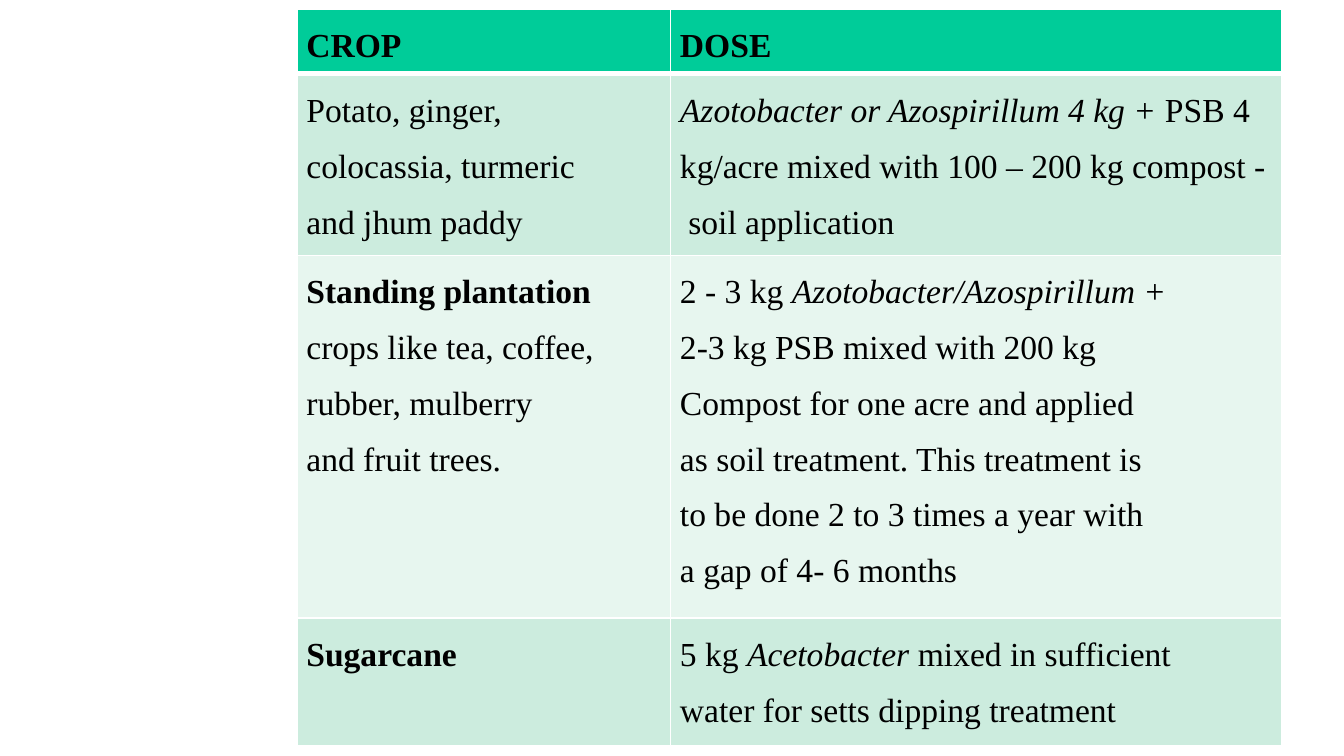
from lxml import etree
from pptx import Presentation
from pptx.dml.color import RGBColor
from pptx.oxml.ns import qn
from pptx.util import Inches, Pt

FONT = "Times New Roman"
COLORS = {"head": "00CC99", "dark": "CCECDE", "light": "E7F6EF",
          "text": "000000", "edge": "FFFFFF"}
EDGES = {"a:lnL": 1, "a:lnR": 1, "a:lnT": 1, "a:lnB": 3}
COLS = [2.78, 4.55]
ROWS = [
    (0.48, "head", [[[("CROP", "b")]], [[("DOSE", "b")]]]),
    (1.35, "dark", [
        [[("Potato, ginger,", "")],
         [("colocassia, turmeric", "")],
         [("and jhum paddy", "")]],
        [[("Azotobacter or Azospirillum 4 kg + ", "i"),
          ("PSB 4 kg/acre mixed with 100 – 200 kg compost -  soil application", "")]],
    ]),
    (2.7, "light", [
        [[("Standing plantation", "b")],
         [("crops like tea, coffee,", "")],
         [("rubber, mulberry", "")],
         [("and fruit trees.", "")]],
        [[("2 - 3 kg ", ""), ("Azotobacter/Azospirillum +", "i")],
         [("2-3 kg PSB mixed with 200 kg", "")],
         [("Compost for one acre and applied", "")],
         [("as soil treatment. This treatment is", "")],
         [("to be done 2 to 3 times a year with", "")],
         [("a gap of 4- 6 months", "")]],
    ]),
    (0.95, "dark", [
        [[("Sugarcane", "b")]],
        [[("5 kg ", ""), ("Acetobacter ", "i"), ("mixed in sufficient", "")],
         [("water for setts dipping treatment", "")]],
    ]),
]

deck = Presentation()
deck.slide_width = Inches(10)
deck.slide_height = Inches(10 * 9 / 16)
slide = deck.slides.add_slide(deck.slide_layouts[6])

high = sum(row[0] for row in ROWS)
frame = slide.shapes.add_table(len(ROWS), len(COLS), Inches(2.21), Inches(0.07),
                               Inches(sum(COLS)), Inches(high))
table = frame.table
for col, width in zip(table.columns, COLS):
    col.width = Inches(width)

for row, (height, fill, texts) in zip(table.rows, ROWS):
    row.height = Inches(height)
    for cell, lines in zip(row.cells, texts):
        cell.margin_left = cell.margin_right = Inches(0.07)
        cell.margin_top = cell.margin_bottom = Inches(0)
        if fill == "head":
            props = cell._tc.get_or_add_tcPr()
            for tag, width in EDGES.items():
                edge = etree.SubElement(props, qn(tag), w=str(Pt(width)))
                paint = etree.SubElement(edge, qn("a:solidFill"))
                etree.SubElement(paint, qn("a:srgbClr"), val=COLORS["edge"])
        cell.fill.solid()
        cell.fill.fore_color.rgb = RGBColor.from_string(COLORS[fill])
        body = cell.text_frame
        for num, line in enumerate(lines):
            para = body.add_paragraph() if num else body.paragraphs[0]
            para.line_spacing = 1.5
            for text, style in line:
                run = para.add_run()
                run.text = text
                run.font.name = FONT
                run.font.size = Pt(18)
                run.font.bold = style == "b"
                run.font.italic = style == "i"
                run.font.color.rgb = RGBColor.from_string(COLORS["text"])

deck.save("out.pptx")
